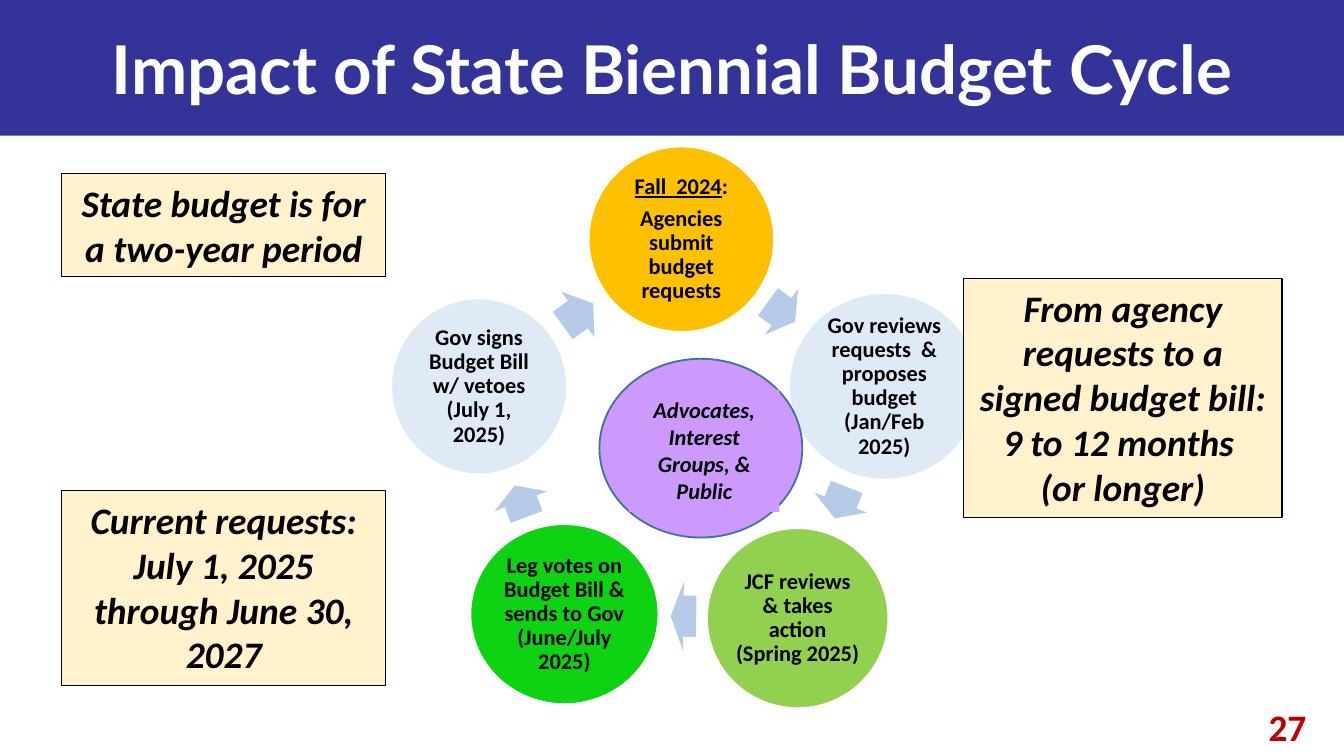
import pptx
import pptx.util
import pptx.dml.color
import pptx.enum.shapes
import pptx.enum.text

Inches = pptx.util.Inches
SHAPES = pptx.enum.shapes.MSO_SHAPE
ANCHORS = pptx.enum.text.MSO_ANCHOR

COLORS = {
    "navy": "333399", "white": "FFFFFF", "black": "000000", "red": "C00000",
    "gold": "FFC000", "pale_blue": "DEEBF7", "olive": "92D050", "green": "0DD312",
    "arrow": "B5CBE7", "purple": "CC99FF", "hub_line": "43739E", "cream": "FFF2CC",
}
STAGE_FONT = {"name": "Calibri", "size": pptx.util.Pt(12), "bold": True}
HUB_FONT = {**STAGE_FONT, "italic": True}
NOTE_FONT = {**HUB_FONT, "size": pptx.util.Pt(20)}
NUMBER_FONT = {**STAGE_FONT, "size": pptx.util.Pt(20)}
TITLE_FONT = {"name": "Lato", "size": pptx.util.Pt(36), "bold": True}

STAGES = [
    ((1.47, 0, 1.38, 1.38), "gold", ["Fall  2024:", "Agencies submit budget requests"]),
    ((2.96, 1.09, 1.42, 1.39), "pale_blue",
     ["Gov reviews requests  & proposes budget (Jan/Feb 2025)"]),
    ((2.35, 2.84, 1.35, 1.34), "olive", ["JCF reviews & takes action (Spring 2025)"]),
    ((0.59, 2.81, 1.4, 1.34), "green",
     ["Leg votes on Budget Bill & sends to Gov (June/July 2025)"]),
    ((0, 1.13, 1.31, 1.31), "pale_blue",
     ["Gov signs Budget Bill w/ vetoes (July 1, 2025)"]),
]
ARROWS = [
    ((2.78, 1.02, 0.25, 0.42), 36),
    ((3.22, 2.44, 0.25, 0.42), 110.8),
    ((2.08, 3.24, 0.19, 0.51), 180.7),
    ((0.84, 2.43, 0.25, 0.42), 249.5),
    ((1.25, 1.04, 0.28, 0.42), 324),
]
NOTES = [
    ((0.46, 1.29, 2.41, 0.77), "State budget is for a two-year period"),
    ((7.17, 2.07, 2.37, 1.78),
     "From agency requests to a signed budget bill: 9 to 12 months \v(or longer)"),
    ((0.46, 3.65, 2.41, 1.45), "Current requests: July 1, 2025 through June 30, 2027"),
]


def rgb(color):
    return pptx.dml.color.RGBColor.from_string(COLORS[color])


def within(box, offset):
    return box[0] + offset[0], box[1] + offset[1], offset[2], offset[3]


def add_filled(slide, kind, box, fill, line=None, line_width=1):
    shape = slide.shapes.add_shape(kind, *map(Inches, box))
    shape.shadow.inherit = False
    shape.fill.solid()
    shape.fill.fore_color.rgb = rgb(fill)
    if line:
        shape.line.color.rgb = rgb(line)
        shape.line.width = pptx.util.Pt(line_width)
    else:
        shape.line.fill.background()
    return shape


def format_run(run, font, color):
    for name, value in font.items():
        setattr(run.font, name, value)
    run.font.color.rgb = rgb(color)


def write(shape, texts, font, color="black", anchor=ANCHORS.TOP, margin=None, spacing=None):
    frame = shape.text_frame
    frame.word_wrap = True
    frame.vertical_anchor = anchor
    if margin is not None:
        for side in ("left", "right", "top", "bottom"):
            setattr(frame, f"margin_{side}", Inches(margin))
    frame.text = "\n".join(texts)
    for paragraph in frame.paragraphs:
        paragraph.alignment = pptx.enum.text.PP_ALIGN.CENTER
        paragraph.line_spacing = spacing
        for run in paragraph.runs:
            format_run(run, font, color)
    return frame


def add_title(slide, box, text):
    bar = add_filled(slide, SHAPES.RECTANGLE, box, "navy")
    write(bar, [text], TITLE_FONT, "white", ANCHORS.MIDDLE)


def add_stage(slide, box, fill, texts):
    circle = add_filled(slide, SHAPES.OVAL, box, fill, "white")
    frame = write(circle, texts, STAGE_FONT, anchor=ANCHORS.MIDDLE, margin=0.01, spacing=0.9)
    if len(texts) > 1:
        heading = frame.paragraphs[0]
        heading.space_after = pptx.util.Pt(4.2)
        date = heading.runs[0]
        date.text = texts[0].rstrip(":")
        date.font.underline = True
        colon = heading.add_run()
        colon.text = ":"
        format_run(colon, STAGE_FONT, "black")


def add_hub(slide, box):
    add_filled(slide, SHAPES.OVAL, box, "purple", "hub_line")
    label = add_filled(slide, SHAPES.RECTANGLE, within(box, (0.22, 0.23, 1.12, 0.91)), "purple")
    write(label, ["Advocates, Interest Groups, & Public"], HUB_FONT)


def add_cycle(slide, box):
    for offset, fill, texts in STAGES:
        add_stage(slide, within(box, offset), fill, texts)
    for offset, rotation in ARROWS:
        arrow = add_filled(slide, SHAPES.RIGHT_ARROW, within(box, offset), "arrow")
        arrow.adjustments[0] = 0.6
        arrow.adjustments[1] = 0.5
        arrow.rotation = rotation
    add_hub(slide, within(box, (1.55, 1.58, 1.51, 1.33)))


def add_note(slide, box, text):
    note = add_filled(slide, SHAPES.RECTANGLE, box, "cream", "black", 0.75)
    write(note, [text], NOTE_FONT)


def add_slide_number(slide, box, number):
    write(slide.shapes.add_textbox(*map(Inches, box)), [number], NUMBER_FONT, "red")


def main():
    presentation = pptx.Presentation()
    presentation.slide_width = Inches(10)
    presentation.slide_height = Inches(10 * 9 / 16)
    slide = presentation.slides.add_slide(presentation.slide_layouts[6])
    add_slide_number(slide, (9.16, 5.19, 0.84, 0.44), "27")
    add_title(slide, (0, 0, 10, 1.01), "Impact of State Biennial Budget Cycle")
    add_cycle(slide, (2.91, 1.09, 4.38, 4.18))
    for box, text in NOTES:
        add_note(slide, box, text)
    presentation.save("out.pptx")


if __name__ == "__main__":
    main()
